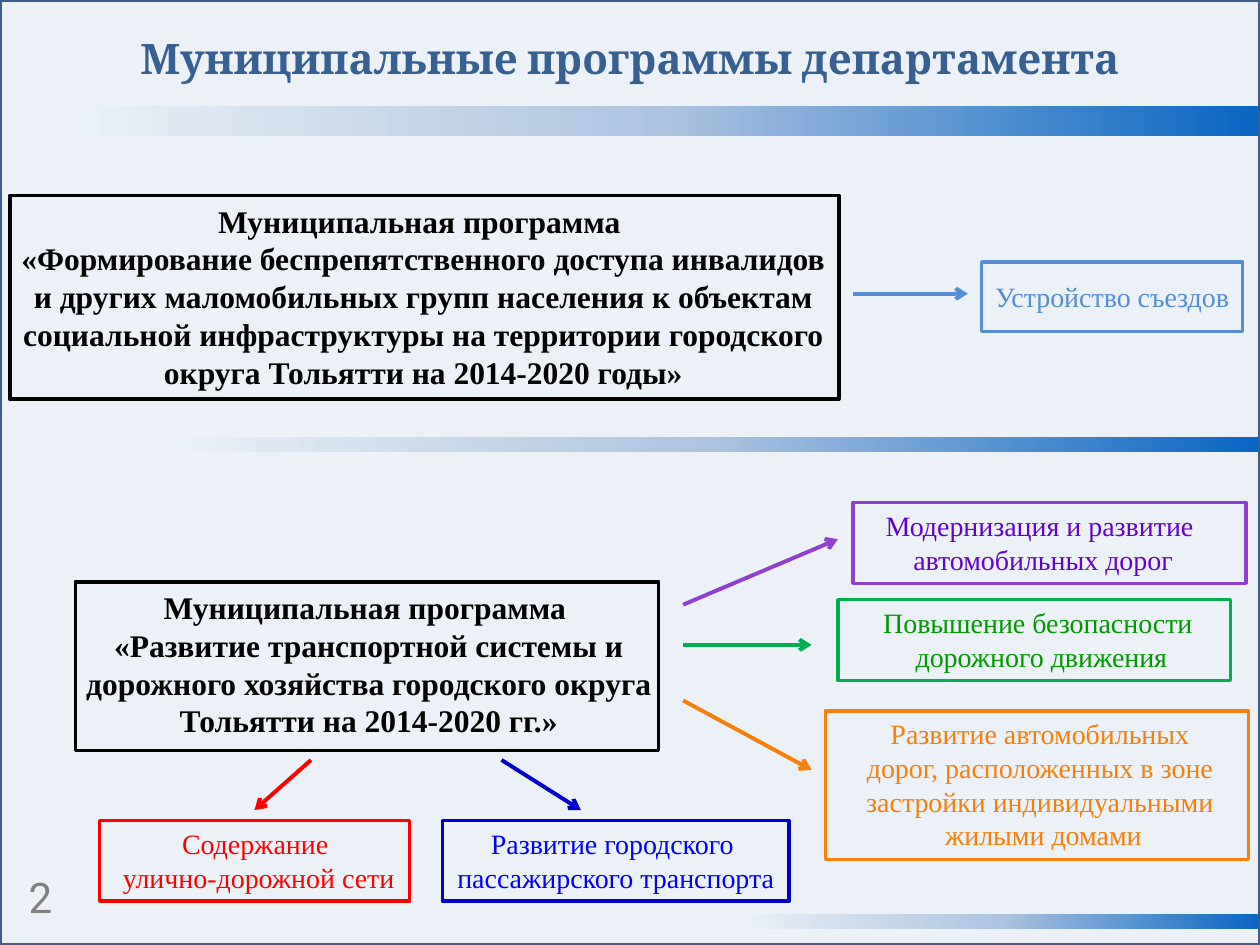
"""Build a slide of the department's municipal programmes and their activities."""
from copy import deepcopy
from dataclasses import dataclass

from lxml.etree import SubElement
from pptx import Presentation
from pptx.dml.color import RGBColor as RGB
from pptx.enum.shapes import MSO_CONNECTOR as Conn, MSO_SHAPE as Shp
from pptx.enum.text import MSO_AUTO_SIZE as Fit, PP_ALIGN as Align
from pptx.oxml.ns import qn
from pptx.util import Cm, Pt


@dataclass(frozen=True)
class Theme:
    title: str = "376092"
    tint: str = "4F81BD"
    border: str = "3A5F8C"
    black: str = "000000"
    gray: str = "808080"
    sky: str = "558ED5"
    violet: str = "8F40D0"
    violet_text: str = "6600CC"
    green: str = "00B050"
    green_text: str = "009900"
    orange: str = "F6800A"
    red: str = "FF0000"
    blue: str = "0000CC"
    blue_text: str = "0000FF"
    bar: tuple = (("0062C4", 0), ("B9CDE5", 0.5), ("FFFFFF", 1))
    tint_alpha: int = 11000
    serif: str = "Times New Roman"
    heading: str = "Cambria"
    sans: str = "Roboto"
    big: float = 24
    medium: float = 18
    small: float = 16
    frame_line: float = 2
    arrow_line: float = 2.25


T = Theme()


@dataclass(frozen=True)
class Box:
    x: float
    y: float
    w: float
    h: float

    def lengths(self) -> tuple:
        return Cm(self.x), Cm(self.y), Cm(self.w), Cm(self.h)


@dataclass(frozen=True)
class Style:
    color: str
    size: float = T.small
    font: str = T.serif
    bold: bool = False
    align: Align = Align.CENTER
    wrap: bool = False


@dataclass(frozen=True)
class Card:
    frame: Box
    text_x: float
    text_w: float
    line: str
    style: Style
    paragraphs: tuple
    text_y: float | None = None


@dataclass(frozen=True)
class Arrow:
    x1: float
    y1: float
    x2: float
    y2: float
    color: str


PROGRAM = Style(T.black, T.medium, bold=True, wrap=True)
ROW = 1.63

BARS = (Box(14.9, 18.42, 10.5, 0.31), Box(1.3, 2.13, 24.1, 0.61), Box(3.2, 8.81, 22.2, 0.31))

CARDS = (
    Card(Box(0.2, 3.94, 16.71, 4.11), 0.18, 16.71, T.black, PROGRAM,
         ("Муниципальная программа \n«Формирование беспрепятственного доступа инвалидов и других "
          "маломобильных групп населения к объектам социальной инфраструктуры на территории "
          "городского округа Тольятти на 2014-2020 годы»",)),
    Card(Box(19.79, 5.28, 5.26, 1.4), 19.81, 5.44, T.sky, Style(T.sky, align=Align.LEFT),
         ("Устройство съездов",), text_y=5.51),
    Card(Box(1.52, 11.73, 11.76, 3.4), 0.74, 13.39, T.black, PROGRAM,
         ("Муниципальная программа \n«Развитие транспортной системы и дорожного хозяйства "
          "городского округа Тольятти на 2014-2020 гг.»",)),
    Card(Box(17.2, 10.13, 7.92, ROW), 17.55, 6.96, T.violet, Style(T.violet_text),
         ("Модернизация и развитие ", "автомобильных дорог")),
    Card(Box(16.89, 12.09, 7.92, ROW), 17.5, 6.99, T.green, Style(T.green_text),
         ("Повышение безопасности ", "дорожного движения")),
    Card(Box(16.64, 14.33, 8.53, 3), 17.15, 7.77, T.orange, Style(T.orange),
         ("Развитие автомобильных ", "дорог, расположенных в зоне ",
          "застройки индивидуальными ", "жилыми домами")),
    Card(Box(2.01, 16.54, 6.25, ROW), 2.18, 6.07, T.red, Style(T.red),
         ("Содержание ", "улично-дорожной сети")),
    Card(Box(8.92, 16.54, 6.99, ROW), 8.92, 6.99, T.blue, Style(T.blue_text),
         ("Развитие городского ", "пассажирского транспорта")),
)

ARROWS = (
    Arrow(17.2, 5.92, 19.51, 5.92, T.sky),
    Arrow(13.77, 12.19, 16.89, 10.87, T.violet),
    Arrow(13.77, 13, 16.36, 13, T.green),
    Arrow(13.77, 14.12, 16.36, 15.52, T.orange),
    Arrow(6.27, 15.32, 5.13, 16.33, T.red),
    Arrow(10.11, 15.32, 11.71, 16.33, T.blue),
)


def add_rect(s, box: Box, line: str | None = None):
    sp = s.shapes.add_shape(Shp.RECTANGLE, *box.lengths())
    sp.shadow.inherit = False
    sp.fill.background()
    if line:
        sp.line.color.rgb = RGB.from_string(line)
        sp.line.width = Pt(T.frame_line)
    else:
        sp.line.fill.background()
    return sp


def add_bar(s, box: Box) -> None:
    sp = add_rect(s, box)
    sp.fill.gradient()
    sp.fill.gradient_angle = 180
    stops = sp.element.spPr.find(f".//{qn('a:gsLst')}")
    stops.append(deepcopy(stops[-1]))
    for stop, (color, position) in zip(sp.fill.gradient_stops, T.bar):
        stop.color.rgb = RGB.from_string(color)
        stop.position = position


def add_tint(s, box: Box) -> None:
    sp = add_rect(s, box, T.border)
    sp.fill.solid()
    sp.fill.fore_color.rgb = RGB.from_string(T.tint)
    color = sp.element.spPr.find(f"{qn('a:solidFill')}/{qn('a:srgbClr')}")
    SubElement(color, qn("a:alpha"), val=str(T.tint_alpha))


def add_text(s, box: Box, style: Style, paragraphs: tuple) -> None:
    tf = s.shapes.add_textbox(*box.lengths()).text_frame
    tf.word_wrap = style.wrap
    tf.auto_size = Fit.SHAPE_TO_FIT_TEXT
    for i, text in enumerate(paragraphs):
        p = tf.add_paragraph() if i else tf.paragraphs[0]
        p.alignment = style.align
        for j, part in enumerate(text.split("\n")):
            if j:
                p.add_line_break()
            r = p.add_run()
            r.text = part
            r.font.name = style.font
            r.font.size = Pt(style.size)
            r.font.bold = style.bold
            r.font.color.rgb = RGB.from_string(style.color)


def add_card(s, card: Card) -> None:
    add_rect(s, card.frame, card.line)
    y = card.frame.y if card.text_y is None else card.text_y
    height = card.frame.h - 2 * (y - card.frame.y)
    add_text(s, Box(card.text_x, y, card.text_w, height), card.style, card.paragraphs)


def add_arrow(s, a: Arrow) -> None:
    c = s.shapes.add_connector(Conn.STRAIGHT, Cm(a.x1), Cm(a.y1), Cm(a.x2), Cm(a.y2))
    c.line.color.rgb = RGB.from_string(a.color)
    c.line.width = Pt(T.arrow_line)
    SubElement(c.line._get_or_add_ln(), qn("a:tailEnd"), type="arrow")
    SubElement(c.element.spPr, qn("a:effectLst"))


def main() -> None:
    prs = Presentation()
    prs.slide_width, prs.slide_height = Cm(25.4), Cm(19.05)
    s = prs.slides.add_slide(prs.slide_layouts[6])
    for bar in BARS:
        add_bar(s, bar)
    add_tint(s, Box(0, 0, 25.4, 19.05))
    add_text(s, Box(1.45, 0.53, 22.5, 1.27),
             Style(T.title, T.big, T.heading, bold=True, wrap=True),
             ("Муниципальные программы департамента",))
    add_text(s, Box(0.33, 17.45, 0.79, 1.27),
             Style(T.gray, T.big, T.sans, align=Align.LEFT, wrap=True), ("2",))
    for card in CARDS:
        add_card(s, card)
    for arrow in ARROWS:
        add_arrow(s, arrow)
    prs.save("out.pptx")


if __name__ == "__main__":
    main()
